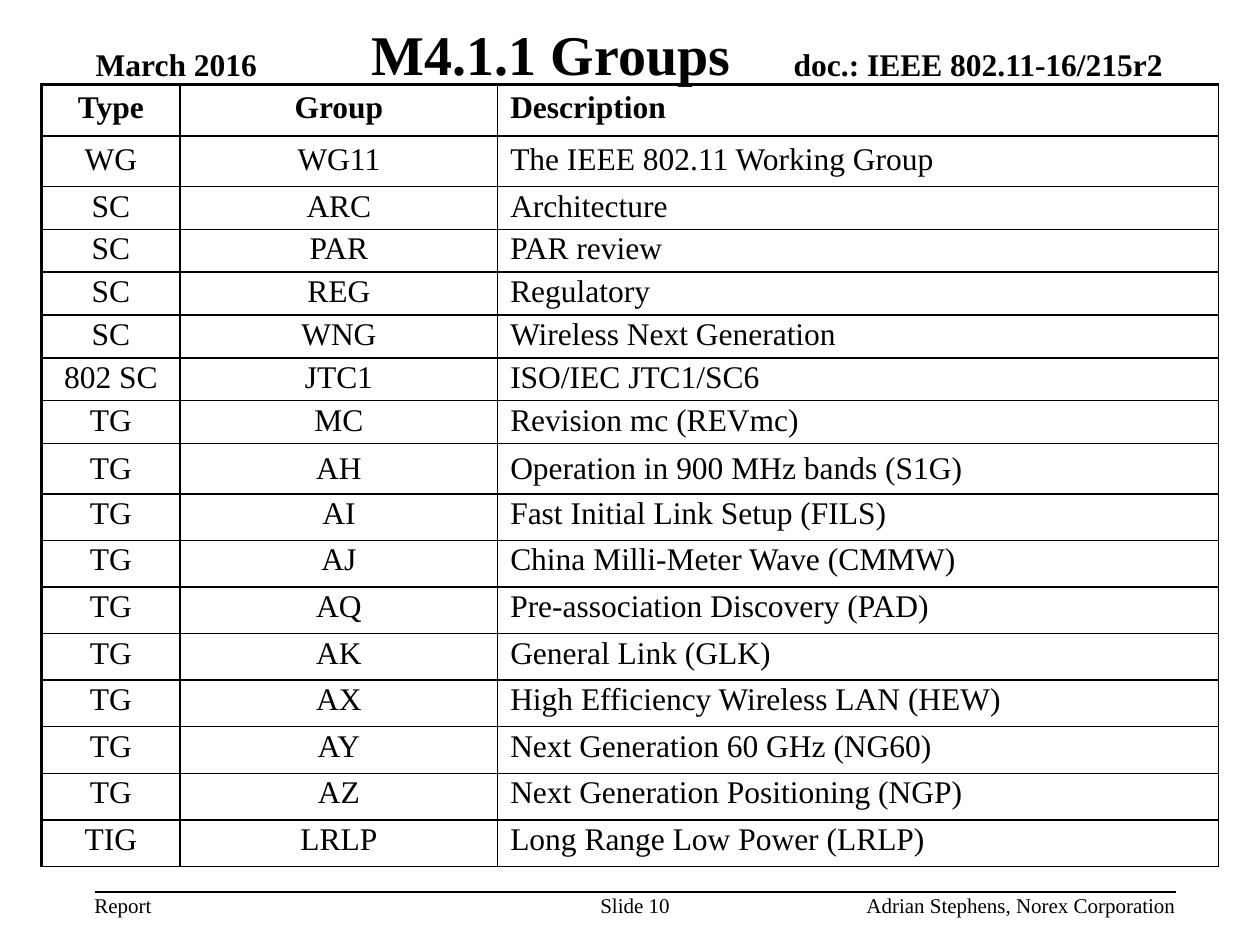
from lxml.etree import SubElement
from pptx import Presentation
from pptx.dml.color import RGBColor
from pptx.enum.shapes import MSO_CONNECTOR
from pptx.enum.text import MSO_ANCHOR as ANCHOR, PP_ALIGN as ALIGN
from pptx.oxml.ns import qn
from pptx.util import Inches, Pt

COLORS = {"ink": "000000", "paper": "FFFFFF"}

COLUMN_WIDTHS = [1.1, 2.52, 5.72]
ROW_HEIGHTS = [0.41, 0.37] + [0.34] * 6 + [0.4] + [0.37] * 8
FILLED_ROWS = 2  # the last rows have a solid background
GROUPS = [
    ("Type", "Group", "Description"),
    ("WG", "WG11", "The IEEE 802.11 Working Group"),
    ("SC", "ARC", "Architecture"),
    ("SC", "PAR", "PAR review"),
    ("SC", "REG", "Regulatory"),
    ("SC", "WNG", "Wireless Next Generation"),
    ("802 SC", "JTC1", "ISO/IEC JTC1/SC6"),
    ("TG", "MC", "Revision mc (REVmc)"),
    ("TG", "AH", "Operation in 900 MHz bands (S1G)"),
    ("TG", "AI", "Fast Initial Link Setup (FILS)"),
    ("TG", "AJ", "China Milli-Meter Wave (CMMW)"),
    ("TG", "AQ", "Pre-association Discovery (PAD)"),
    ("TG", "AK", "General Link (GLK)"),
    ("TG", "AX", "High Efficiency Wireless LAN (HEW)"),
    ("TG", "AY", "Next Generation 60 GHz (NG60)"),
    ("TG", "AZ", "Next Generation Positioning (NGP)"),
    ("TIG", "LRLP", "Long Range Low Power (LRLP)"),
]


def color(name):
    return RGBColor.from_string(COLORS[name])


def write(tf, text, size=18, bold=False, align=ALIGN.LEFT, font="Times New Roman"):
    p = tf.paragraphs[0]
    p.alignment = align
    r = p.add_run()
    r.text = text
    r.font.name = font
    r.font.size = Pt(size)
    r.font.bold = bold
    r.font.color.rgb = color("ink")


def set_borders(cell, **widths):
    """Draw borders given as L, R, T and B in points."""
    props = cell._tc.get_or_add_tcPr()
    for side in "LRTB":
        ln = SubElement(props, qn(f"a:ln{side}"), w=str(Pt(widths[side])))
        fill = SubElement(ln, qn("a:solidFill"))
        SubElement(fill, qn("a:srgbClr"), val=COLORS["ink"])


class SlideBuilder:
    def __init__(self, slide):
        self.s = slide
        self.line_width = 1
        self.edge_width = 2.25

    def text(self, text, left, top, width, height, anchor=ANCHOR.TOP, **style):
        box = self.s.shapes.add_textbox(*map(Inches, (left, top, width, height)))
        tf = box.text_frame
        tf.word_wrap = True
        tf.vertical_anchor = anchor
        tf.margin_left = tf.margin_right = tf.margin_top = tf.margin_bottom = 0
        write(tf, text, **style)

    def rule(self, left, right, y):
        line = self.s.shapes.add_connector(
            MSO_CONNECTOR.STRAIGHT, Inches(left), Inches(y), Inches(right), Inches(y))
        line.line.color.rgb = color("ink")
        line.line.width = Pt(self.line_width)
        SubElement(line._element.spPr, qn("a:effectLst"))

    def table(self, rows, left, top, widths, heights):
        table = self.s.shapes.add_table(
            len(rows), len(widths), Inches(left), Inches(top),
            Inches(sum(widths)), Inches(sum(heights))).table
        table.first_row = table.horz_banding = False
        for column, width in zip(table.columns, widths):
            column.width = Inches(width)
        for i, (values, height) in enumerate(zip(rows, heights)):
            table.rows[i].height = Inches(height)
            for j, value in enumerate(values):
                self.cell(table.cell(i, j), value, i, j, len(rows))

    def cell(self, cell, value, row, col, row_count):
        cell.margin_left = cell.margin_right = Inches(0.1)
        cell.margin_top = cell.margin_bottom = Inches(0.05 if row < 2 else 0.02)
        if value and GROUPS[row][1] == "AH":
            cell.vertical_anchor = ANCHOR.MIDDLE
        set_borders(cell, R=self.line_width, B=self.line_width,
                    L=self.line_width if col else self.edge_width,
                    T=self.line_width if row else self.edge_width)
        if row >= row_count - FILLED_ROWS:
            cell.fill.solid()
            cell.fill.fore_color.rgb = color("paper")
        else:
            cell.fill.background()
        write(cell.text_frame, value, bold=row == 0,
              align=ALIGN.LEFT if col == 2 else ALIGN.CENTER)


def main():
    prs = Presentation()
    prs.slide_width, prs.slide_height = Inches(10), Inches(7.5)
    page = SlideBuilder(prs.slides.add_slide(prs.slide_layouts[6]))

    page.text("doc.: IEEE 802.11-16/215r2", 5.77, 0.36, 3.46, 0.3,
              anchor=ANCHOR.BOTTOM, bold=True, align=ALIGN.RIGHT)
    page.text("March 2016", 0.76, 0.36, 1.5, 0.3, anchor=ANCHOR.BOTTOM, bold=True)
    page.rule(0.75, 9.25, 0.67)
    page.text("M4.1.1 Groups", 0.5, 0.17, 7.75, 0.5, anchor=ANCHOR.MIDDLE,
              size=32, bold=True, align=ALIGN.CENTER)

    page.table(GROUPS, 0.33, 0.67, COLUMN_WIDTHS, ROW_HEIGHTS)

    page.rule(0.75, 9.33, 7.08)
    page.text("Report", 0.75, 7.08, 0.6, 0.2, size=12)
    page.text("Slide 10", 4.64, 7.08, 0.8, 0.2, size=12, align=ALIGN.CENTER)
    page.text("Adrian Stephens, Norex Corporation", 6.73, 7.08, 2.6, 0.2,
              size=12, align=ALIGN.RIGHT)
    prs.save("out.pptx")


if __name__ == "__main__":
    main()
